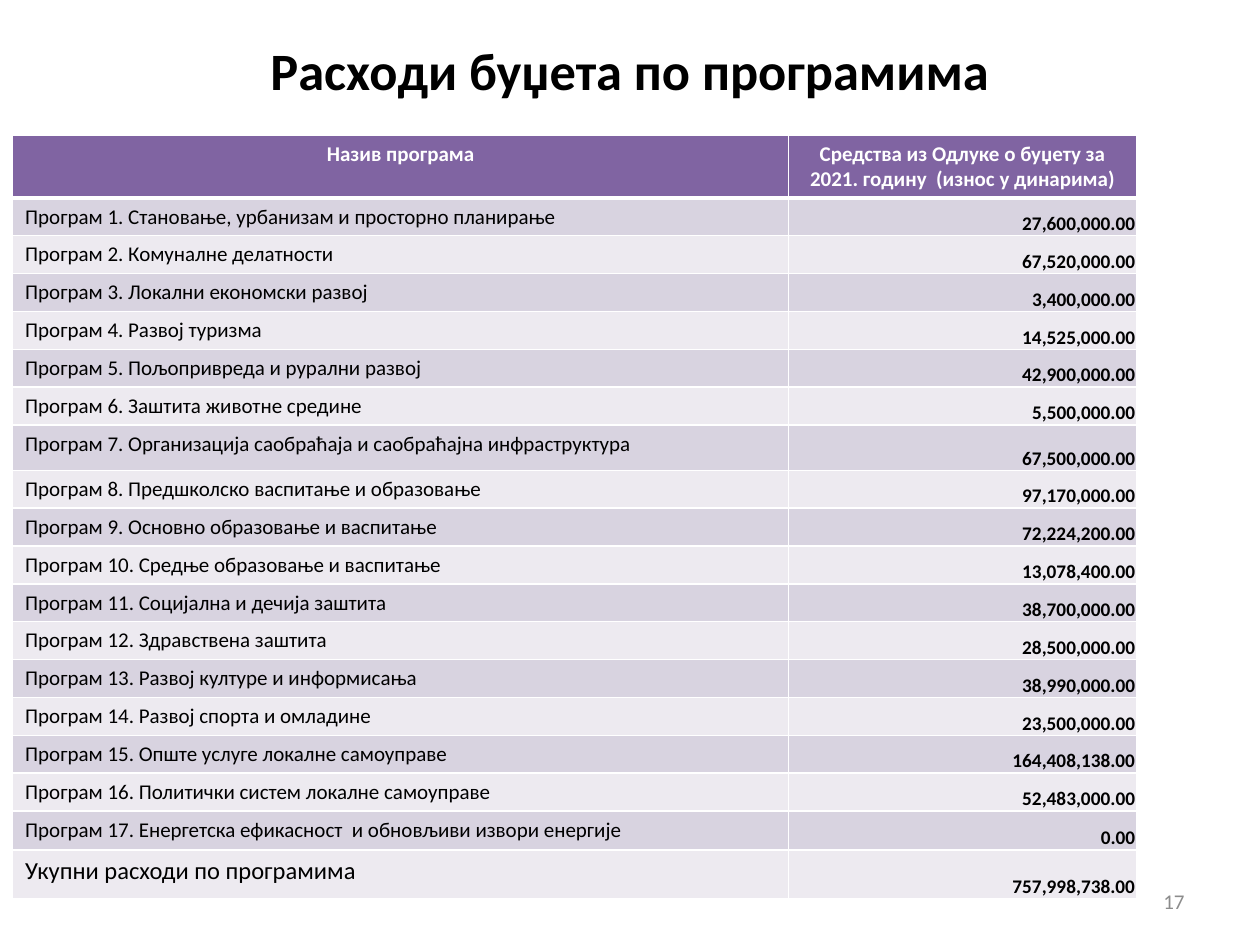
from pptx import Presentation
from pptx.dml.color import RGBColor
from pptx.enum.text import MSO_ANCHOR as ANCHOR, PP_ALIGN as ALIGN
from pptx.oxml import parse_xml
from pptx.oxml.ns import nsdecls
from pptx.util import Inches, Pt

COLORS = {
    "header": "8064A2",
    "odd": "D8D3E0",
    "even": "EDEAF0",
    "white": "FFFFFF",
    "black": "000000",
    "number": "8C8C8C",
}
HEADER = ("Назив програма",
          "Средства из Одлуке о буџету за 2021. годину  (износ у динарима)")
PROGRAMS = [
    ("Становање, урбанизам и просторно планирање", "27,600,000.00"),
    ("Комуналне делатности", "67,520,000.00"),
    ("Локални економски развој", "3,400,000.00"),
    ("Развој туризма", "14,525,000.00"),
    ("Пољопривреда и рурални развој", "42,900,000.00"),
    ("Заштита животне средине", "5,500,000.00"),
    ("Организација саобраћаја и саобраћајна инфраструктура", "67,500,000.00"),
    ("Предшколско васпитање и образовање", "97,170,000.00"),
    ("Основно образовање и васпитање", "72,224,200.00"),
    ("Средње образовање и васпитање", "13,078,400.00"),
    ("Социјална и дечија заштита", "38,700,000.00"),
    ("Здравствена заштита", "28,500,000.00"),
    ("Развој културе и информисања", "38,990,000.00"),
    ("Развој спорта и омладине", "23,500,000.00"),
    ("Опште услуге локалне самоуправе", "164,408,138.00"),
    ("Политички систем локалне самоуправе", "52,483,000.00"),
    ("Енергетска ефикасност  и обновљиви извори енергије", "0.00"),
]
TOTAL = ("Укупни расходи по програмима", "757,998,738.00")


def write(tf, text, size, color, bold=False, align=ALIGN.LEFT):
    tf.word_wrap = True
    p = tf.paragraphs[0]
    p.text = text
    p.alignment = align
    p.font.name = "Calibri"
    p.font.size = Pt(size)
    p.font.bold = bold
    p.font.color.rgb = RGBColor.from_string(COLORS[color])


def style_cell(cell, fill, bottom):
    for side, width in (("L", 1), ("R", 1), ("T", 1), ("B", bottom)):
        cell._tc.get_or_add_tcPr().append(parse_xml(
            f'<a:ln{side} {nsdecls("a")} w="{Pt(width)}"><a:solidFill>'
            f'<a:srgbClr val="{COLORS["white"]}"/></a:solidFill></a:ln{side}>'))
    cell.fill.solid()
    cell.fill.fore_color.rgb = RGBColor.from_string(COLORS[fill])


prs = Presentation()
prs.slide_width, prs.slide_height = Inches(10), Inches(7.5)
s = prs.slides.add_slide(prs.slide_layouts[6])

title = s.shapes.add_textbox(Inches(0.74), Inches(0.13), Inches(8.52), Inches(0.85))
title.text_frame.vertical_anchor = ANCHOR.MIDDLE
write(title.text_frame, "Расходи буџета по програмима", 30, "black", True, ALIGN.CENTER)

number = s.shapes.add_textbox(Inches(7.17), Inches(6.95), Inches(2.33), Inches(0.4))
number.text_frame.vertical_anchor = ANCHOR.MIDDLE
write(number.text_frame, "17", 12, "number", align=ALIGN.RIGHT)

rows = [HEADER]
rows += [(f"Програм {i}. {name}", amount) for i, (name, amount) in enumerate(PROGRAMS, 1)]
rows.append(TOTAL)
last = len(rows) - 1
heights = {0: 0.49, 7: 0.36, last - 1: 0.31, last: 0.39}

table = s.shapes.add_table(len(rows), 2, Inches(0.1), Inches(1.07),
                           Inches(8.92), Inches(6.06)).table
table.columns[0].width = Inches(6.16)
table.columns[1].width = Inches(2.76)

for i, texts in enumerate(rows):
    table.rows[i].height = Inches(heights.get(i, 0.29))
    fill = "header" if i == 0 else "odd" if i % 2 else "even"
    for j, text in enumerate(texts):
        cell = table.cell(i, j)
        style_cell(cell, fill, 3 if i == 0 else 1)
        if i == 0:
            write(cell.text_frame, text, 12, "white", True, ALIGN.CENTER)
        elif j == 0:
            write(cell.text_frame, text, 14 if i == last else 12, "black")
        else:
            cell.vertical_anchor = ANCHOR.BOTTOM
            cell.margin_left = cell.margin_right = cell.margin_top = Inches(0.01)
            cell.margin_bottom = 0
            write(cell.text_frame, text, 11, "black", True, ALIGN.RIGHT)

prs.save("out.pptx")
